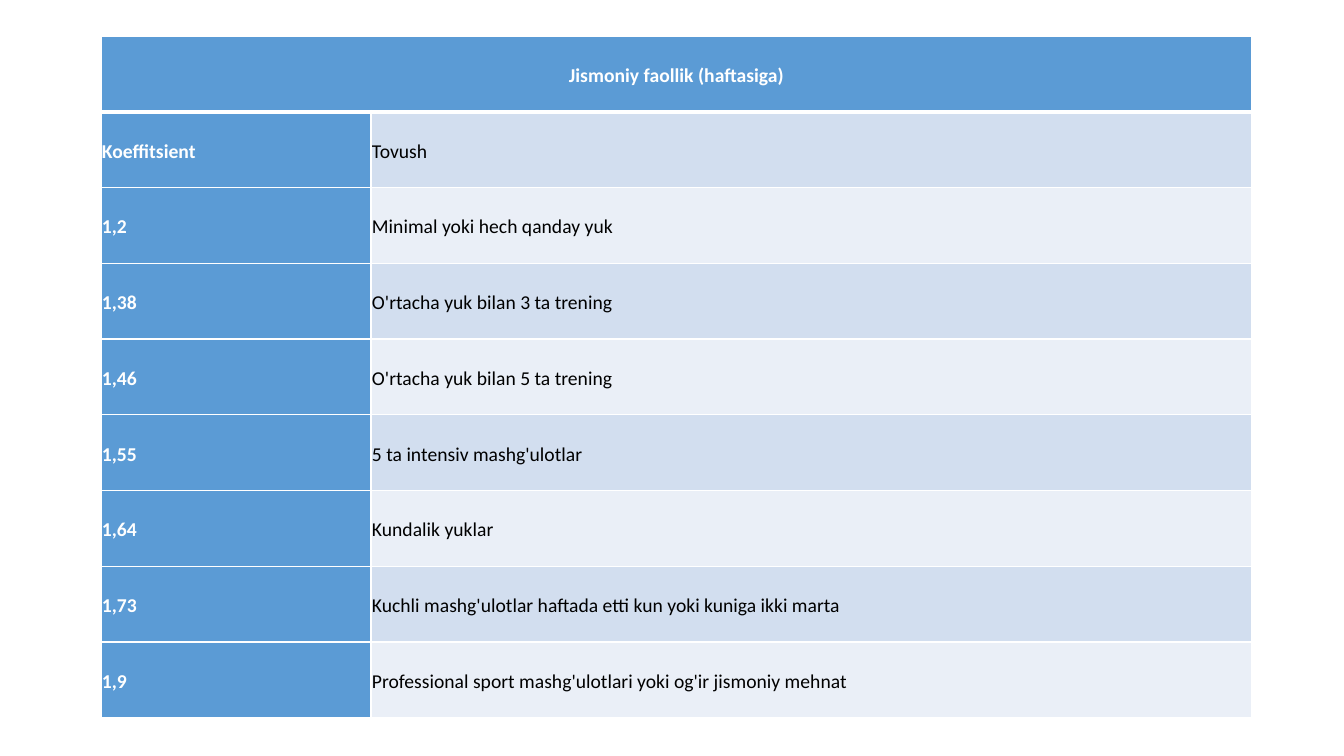
from lxml import etree
from pptx import Presentation
from pptx import util as u
from pptx.dml.color import RGBColor
from pptx.enum import text
from pptx.oxml import ns

COLORS = {"accent": "5B9BD5", "band": "D2DEEF", "light": "EAEFF7",
          "white": "FFFFFF", "black": "000000"}
PX = 12192000 / 1344
TITLE = "Jismoniy faollik (haftasiga)"
ROWS = [
    ("Koeffitsient", "Tovush"),
    ("1,2", "Minimal yoki hech qanday yuk"),
    ("1,38", "O'rtacha yuk bilan 3 ta trening"),
    ("1,46", "O'rtacha yuk bilan 5 ta trening"),
    ("1,55", "5 ta intensiv mashg'ulotlar"),
    ("1,64", "Kundalik yuklar"),
    ("1,73", "Kuchli mashg'ulotlar haftada etti kun yoki kuniga ikki marta"),
    ("1,9", "Professional sport mashg'ulotlari yoki og'ir jismoniy mehnat"),
]


def px(n):
    return u.Emu(round(n * PX))


class Deck:
    """Holds the table style and the current slide."""

    font = "Calibri"
    size = u.Pt(14)

    def __init__(self, width, height):
        self.prs = Presentation()
        self.prs.slide_width, self.prs.slide_height = px(width), px(height)
        self.s = self.prs.slides.add_slide(self.prs.slide_layouts[6])

    def borders(self, cell, **widths):
        tcPr = cell._tc.get_or_add_tcPr()
        for side in "LRTB":
            ln = etree.SubElement(tcPr, ns.qn(f"a:ln{side}"),
                                  w=str(u.Pt(widths.get(side, 1))))
            fill = etree.SubElement(ln, ns.qn("a:solidFill"))
            etree.SubElement(fill, ns.qn("a:srgbClr"), val=COLORS["white"])

    def cell(self, cell, words, fill, color, align, bold):
        cell.fill.solid()
        cell.fill.fore_color.rgb = RGBColor.from_string(COLORS[fill])
        cell.margin_left = cell.margin_right = px(1)
        cell.margin_top = cell.margin_bottom = px(1)
        cell.vertical_anchor = text.MSO_ANCHOR.MIDDLE
        p = cell.text_frame.paragraphs[0]
        p.text = words
        p.alignment = align
        p.line_spacing = 1.15
        p.font.name, p.font.size, p.font.bold = self.font, self.size, bold
        p.font.color.rgb = RGBColor.from_string(COLORS[color])
        return p

    def table(self, left, top, widths, height, title, rows):
        count = len(rows) + 1
        table = self.s.shapes.add_table(count, len(widths), px(left), px(top),
                                        px(sum(widths)), px(height)).table
        for column, width in zip(table.columns, widths):
            column.width = px(width)
        for i, row in enumerate(table.rows):
            row.height = px(height / count)
            for cell in row.cells:
                self.borders(cell, **({"B": 3} if i == 0 else {"T": 3} if i == 1 else {}))
        header = table.cell(0, 0)
        header.merge(table.cell(0, len(widths) - 1))
        p = self.cell(header, title, "accent", "white", text.PP_ALIGN.CENTER, True)
        p.space_after = u.Pt(10)
        for i, (factor, load) in enumerate(rows, 1):
            align = text.PP_ALIGN.LEFT if i == len(rows) else text.PP_ALIGN.JUSTIFY
            self.cell(table.cell(i, 0), factor, "accent", "white", align, True)
            self.cell(table.cell(i, 1), load, "band" if i % 2 else "light",
                      "black", align, False)


def main():
    deck = Deck(1344, 756)
    deck.table(101, 36, (270, 881), 682, TITLE, ROWS)
    deck.prs.save("out.pptx")


if __name__ == "__main__":
    main()
